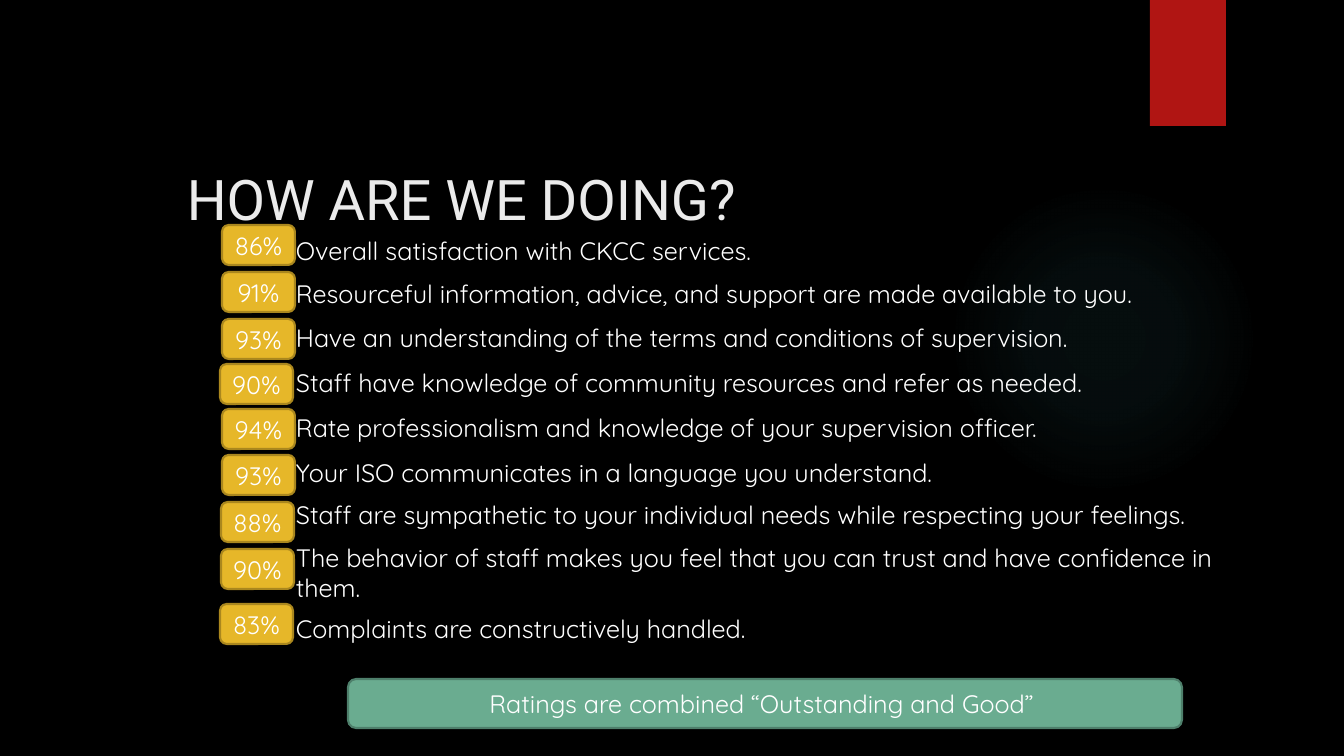
from lxml import etree
from pptx import Presentation
from pptx.dml.color import RGBColor
from pptx.enum.shapes import MSO_SHAPE as Shape
from pptx.enum.text import MSO_ANCHOR as Anchor, PP_ALIGN as Align
from pptx.oxml import parse_xml
from pptx.oxml.ns import nsdecls, qn
from pptx.util import Pt

EMU_PER_PX = 914400 / 100.8
BODY_FONT = "Quicksand"
WHITE = "FFFFFF"

# badge left, badge top, rating, statement top, statement height, statement
RATINGS = [
    (222, 225, "86%", 230, 40, "Overall satisfaction with CKCC services."),
    (222, 272, "91%", 273, 40, "Resourceful information, advice, and support are made available to you."),
    (222, 319, "93%", 317, 40, "Have an understanding of the terms and conditions of supervision."),
    (220, 364, "90%", 362, 40, "Staff have knowledge of community resources and refer as needed."),
    (222, 409, "94%", 407, 40, "Rate professionalism and knowledge of your supervision officer."),
    (222, 455, "93%", 452, 40, "Your ISO communicates in a language you understand."),
    (221, 502, "88%", 494, 40, "Staff are sympathetic to your individual needs while respecting your feelings."),
    (221, 549, "90%", 537, 72, "The behavior of staff makes you feel that you can trust and have confidence in them."),
    (220, 604, "83%", 608, 40, "Complaints are constructively handled."),
]


def px(length):
    return round(length * EMU_PER_PX)


def color(hex_code):
    return RGBColor.from_string(hex_code)


def write(item, text, size=18, font=BODY_FONT, hex_code=WHITE, align=Align.LEFT, anchor=Anchor.TOP):
    frame = item.text_frame
    frame.word_wrap = True
    frame.vertical_anchor = anchor
    frame.text = text
    para = frame.paragraphs[0]
    para.alignment = align
    for span in para.runs:
        span.font.size = Pt(size)
        span.font.name = font
        span.font.color.rgb = color(hex_code)


def add_text(page, left, top, width, height, text, **style):
    box = page.shapes.add_textbox(px(left), px(top), px(width), px(height))
    write(box, text, **style)


def add_block(page, kind, left, top, width, height, fill):
    block = page.shapes.add_shape(kind, px(left), px(top), px(width), px(height))
    block.shadow.inherit = False
    block.fill.solid()
    block.fill.fore_color.rgb = color(fill)
    block.line.fill.background()
    return block


def add_label(page, left, top, width, height, text, fill, outline):
    """Add an outlined rounded rectangle with centred text."""
    label = add_block(page, Shape.ROUNDED_RECTANGLE, left, top, width, height, fill)
    label.line.color.rgb = color(outline)
    label.line.width = Pt(1.5)
    write(label, text, align=Align.CENTER, anchor=Anchor.MIDDLE)


def add_glow(page, left, top, size, hex_code, stops):
    """Add a circle fading outwards; stops are (position %, opacity %)."""
    glow = add_block(page, Shape.OVAL, left, top, size, size, hex_code)
    gradient = parse_xml(
        f'<a:gradFill {nsdecls("a")} rotWithShape="1"><a:gsLst/><a:path path="circle">'
        '<a:fillToRect l="50000" t="50000" r="50000" b="50000"/></a:path></a:gradFill>')
    for position, opacity in stops:
        stop = etree.SubElement(gradient[0], qn("a:gs"), pos=str(position * 1000))
        tint = etree.SubElement(stop, qn("a:srgbClr"), val=hex_code)
        etree.SubElement(tint, qn("a:alpha"), val=str(opacity * 1000))
    properties = glow.element.spPr
    properties.replace(properties.find(qn("a:solidFill")), gradient)


def main():
    deck = Presentation()
    deck.slide_width, deck.slide_height = px(1344), px(756)
    page = deck.slides.add_slide(deck.slide_layouts[6])
    page.background.fill.solid()
    page.background.fill.fore_color.rgb = color("000000")

    add_glow(page, 949, 184, 310, "50B9C1", [(0, 7), (36, 6), (69, 0)])
    add_block(page, Shape.RECTANGLE, 1150, 0, 76, 126, "B01513")
    add_text(page, 177, 113, 973, 124, "HOW ARE WE DOING?", size=40, font="Roboto",
             hex_code="EBEBEB", anchor=Anchor.BOTTOM)

    for _, _, _, top, height, statement in RATINGS:
        add_text(page, 286, top, 950, height, statement)
    for left, top, rating, _, _, _ in RATINGS:
        add_label(page, left, top, 73, 40, rating, "E6B729", "AA871E")
    add_label(page, 348, 679, 834, 49, "Ratings are combined “Outstanding and Good” ",
              "6AAC90", "4E7F6B")

    deck.save("out.pptx")


if __name__ == "__main__":
    main()
